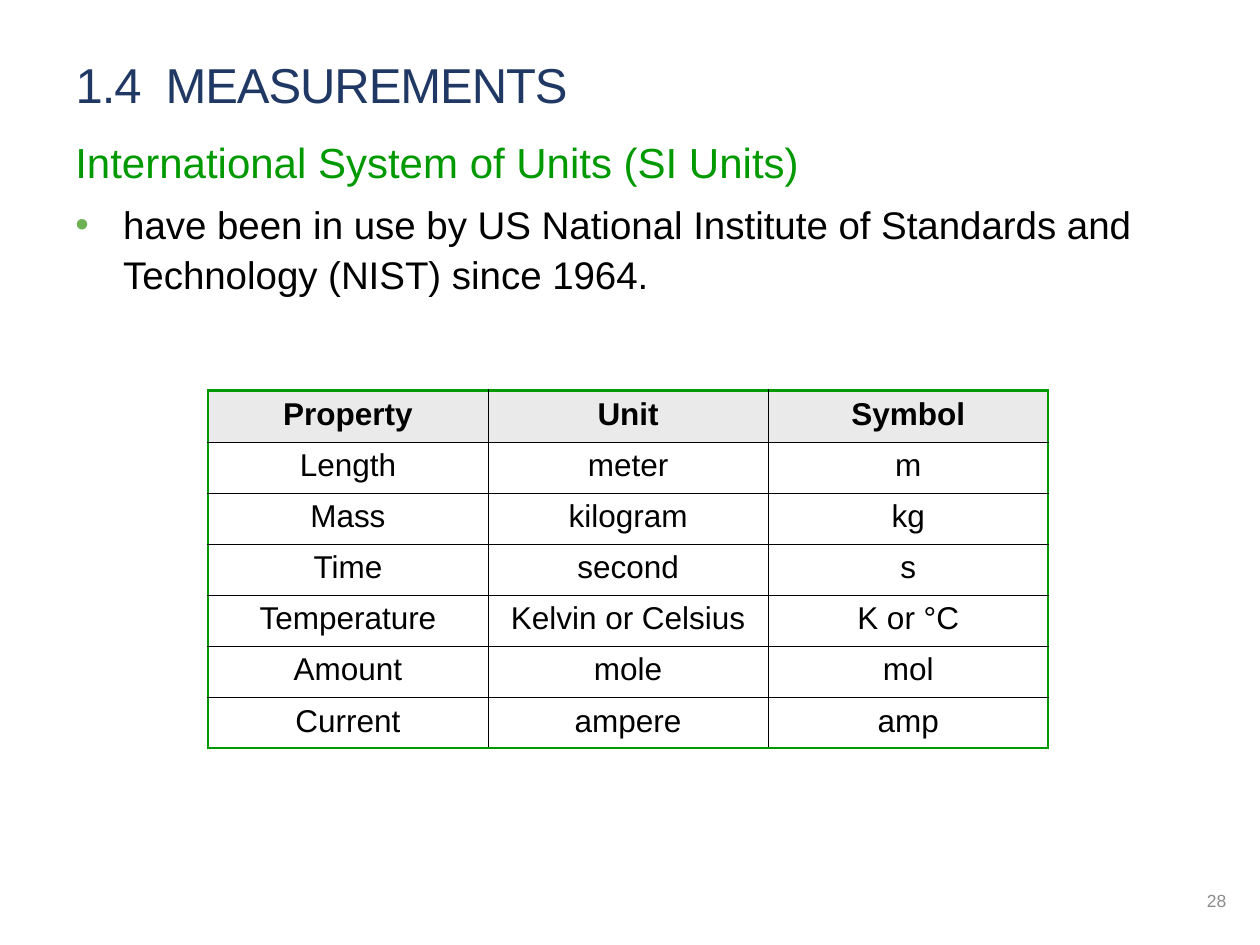
"""Build a slide on SI units with a table of properties, units and symbols."""
from lxml.etree import SubElement
from pptx import Presentation
from pptx.dml.color import RGBColor
from pptx.enum.text import MSO_ANCHOR as ANCHOR, PP_ALIGN as ALIGN
from pptx.oxml.ns import qn
from pptx.util import Inches, Pt

NAVY = RGBColor(0x20, 0x38, 0x64)
GREEN = RGBColor(0x00, 0x99, 0x00)
BULLET = RGBColor(0x6C, 0xB2, 0x55)
BLACK = RGBColor(0x00, 0x00, 0x00)
WHITE = RGBColor(0xFF, 0xFF, 0xFF)
HEADER = RGBColor(0xEA, 0xEA, 0xEA)
GRAY = RGBColor(0x8C, 0x8C, 0x8C)

ROWS = [
    ("Property", "Unit", "Symbol"),
    ("Length", "meter", "m"),
    ("Mass", "kilogram", "kg"),
    ("Time", "second", "s"),
    ("Temperature", "Kelvin or Celsius", "K or °C"),
    ("Amount", "mole", "mol"),
    ("Current", "ampere", "amp"),
]


def style(p, size, color, bold=False):
    for r in p.runs:
        r.font.name = "Arial"
        r.font.size = Pt(size)
        r.font.bold = bold
        r.font.color.rgb = color


def add_border(cell, side, outer):
    width, color = (Pt(1.5), GREEN) if outer else (Pt(0.25), BLACK)
    ln = SubElement(cell._tc.get_or_add_tcPr(), qn(f"a:ln{side}"), w=str(width))
    SubElement(SubElement(ln, qn("a:solidFill")), qn("a:srgbClr"), val=str(color))


prs = Presentation()
prs.slide_width, prs.slide_height = Inches(10), Inches(7.5)
s = prs.slides.add_slide(prs.slide_layouts[5])
title = s.shapes.title
title.left, title.top = Inches(0.5), Inches(0.38)
title.width, title.height = Inches(9.33), Inches(0.57)
tf = title.text_frame
tf.text = "1.4  MEASUREMENTS"
tf.vertical_anchor = ANCHOR.BOTTOM
p = tf.paragraphs[0]
p.alignment = ALIGN.LEFT
style(p, 28, NAVY)
p.runs[0].font._element.set("spc", "-60")

body = s.shapes.add_textbox(Inches(0.5), Inches(1.01), Inches(9.5), Inches(4.31))
tf = body.text_frame
tf.word_wrap = True
p = tf.paragraphs[0]
p.text = "International System of Units (SI Units)"
style(p, 24, GREEN)
p = tf.add_paragraph()
p.text = ("have been in use by US National Institute of Standards "
          "and Technology (NIST) since 1964.")
style(p, 22, BLACK)
for p in tf.paragraphs:
    p.space_after = Pt(6)
    p.line_spacing = 1.07
pPr = p._p.get_or_add_pPr()
pPr.set("marL", str(Inches(0.38)))
pPr.set("indent", str(-Inches(0.38)))
SubElement(SubElement(pPr, qn("a:buClr")), qn("a:srgbClr"), val=str(BULLET))
SubElement(pPr, qn("a:buFont"), typeface="Arial")
SubElement(pPr, qn("a:buChar"), char="•")

n_rows, n_cols = len(ROWS), len(ROWS[0])
table = s.shapes.add_table(n_rows, n_cols, Inches(1.65), Inches(3.1),
                           Inches(6.67), Inches(2.84)).table
table.horz_banding = False
for i, row in enumerate(ROWS):
    for j, text in enumerate(row):
        cell = table.cell(i, j)
        cell.text = text
        p = cell.text_frame.paragraphs[0]
        p.alignment = ALIGN.CENTER
        style(p, 18, BLACK, bold=i == 0)
        add_border(cell, "L", j == 0)
        add_border(cell, "R", j == n_cols - 1)
        add_border(cell, "T", i == 0)
        add_border(cell, "B", i == n_rows - 1)
        cell.fill.solid()
        cell.fill.fore_color.rgb = HEADER if i == 0 else WHITE

number = s.shapes.add_textbox(Inches(7.58), Inches(6.95), Inches(2.25), Inches(0.4))
tf = number.text_frame
tf.word_wrap = True
tf.vertical_anchor = ANCHOR.MIDDLE
p = tf.paragraphs[0]
p.text = "28"
p.alignment = ALIGN.RIGHT
style(p, 10, GRAY)

prs.save("out.pptx")
